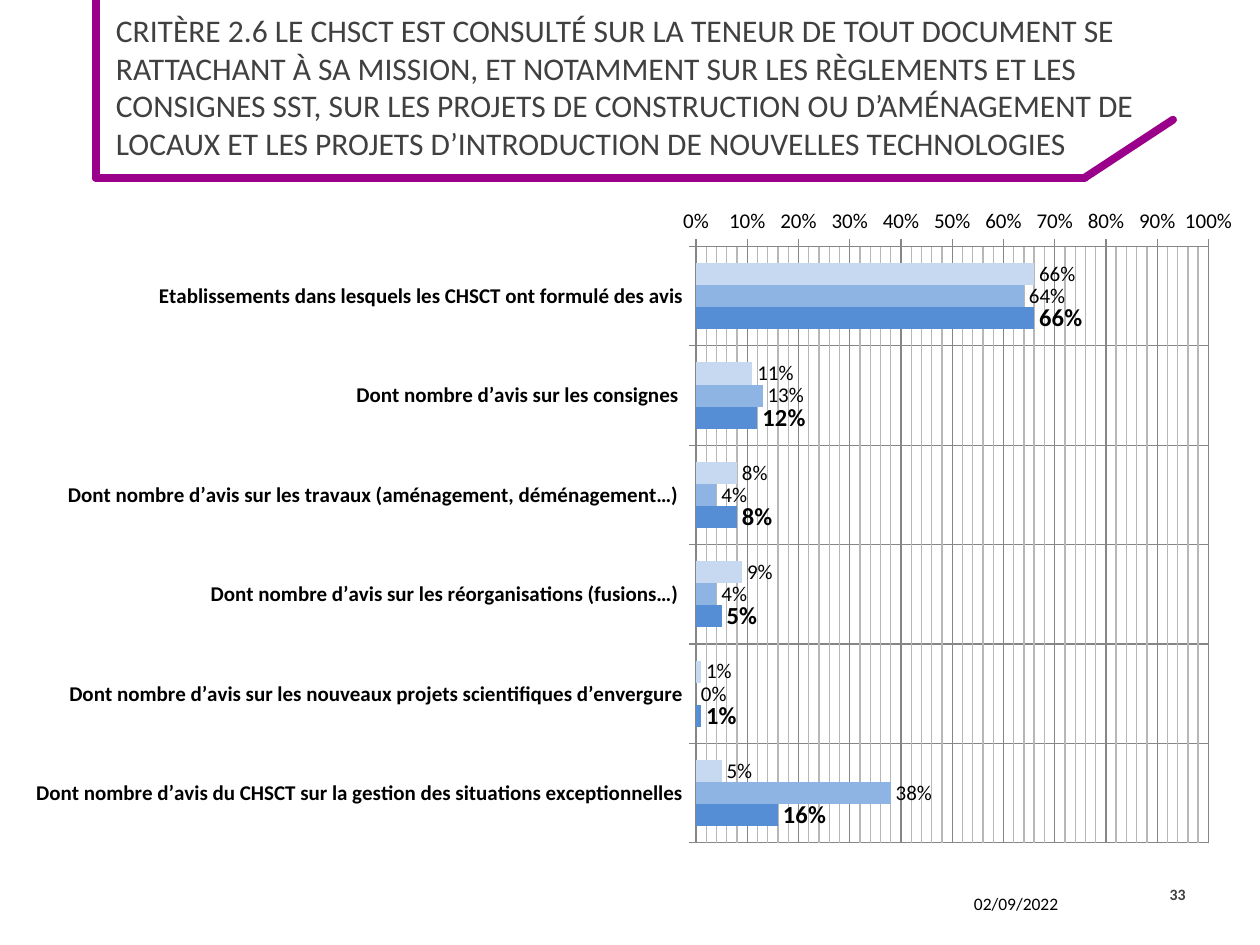
from dataclasses import dataclass
from lxml.etree import SubElement
from pptx import Presentation
from pptx.chart.data import CategoryChartData as Data
from pptx.dml.color import RGBColor as RGB
from pptx.enum.chart import XL_CHART_TYPE as Kind, XL_LABEL_POSITION as Pos
from pptx.enum.chart import XL_TICK_MARK as Tick
from pptx.enum.shapes import MSO_CONNECTOR as Link
from pptx.enum.text import MSO_ANCHOR as Anchor, PP_ALIGN as Align
from pptx.oxml.ns import qn
from pptx.util import Inches, Pt


@dataclass(frozen=True)
class Theme:
    face: str = "Calibri"
    frame: str = "9B008A"
    ink: str = "000000"
    soft: str = "404040"
    grid: str = "868686"
    fine: str = "B7B7B7"
    head: int = 18
    axis: int = 12
    total: int = 14
    date: int = 10
    page: int = 9


T = Theme()

TITLE = (
    "CRITÈRE 2.6 LE CHSCT EST CONSULTÉ SUR LA TENEUR DE TOUT DOCUMENT SE "
    "RATTACHANT À SA MISSION, ET NOTAMMENT SUR LES RÈGLEMENTS ET LES "
    "CONSIGNES SST, SUR LES PROJETS DE CONSTRUCTION OU D’AMÉNAGEMENT DE "
    "LOCAUX ET LES PROJETS D’INTRODUCTION DE NOUVELLES TECHNOLOGIES"
)
TOPICS = [
    "Etablissements dans lesquels les CHSCT ont formulé des avis",
    "Dont nombre d’avis sur les consignes ",
    "Dont nombre d’avis sur les travaux (aménagement, déménagement…) ",
    "Dont nombre d’avis sur les réorganisations (fusions…) ",
    "Dont nombre d’avis sur les nouveaux projets scientifiques d’envergure",
    "Dont nombre d’avis du CHSCT sur la gestion des situations exceptionnelles",
]
SERIES = [
    ("Series 1", [0.66, 0.11, 0.08, 0.09, 0.01, 0.05], "C6D9F1", T.axis, False),
    ("Series 2", [0.64, 0.13, 0.04, 0.04, 0, 0.38], "8EB4E3", T.axis, False),
    ("Series 3", [0.66, 0.12, 0.08, 0.05, 0.01, 0.16], "558ED5", T.total, True),
]


def set_font(font, size, color=T.ink, bold=False):
    font.name, font.size, font.bold = T.face, Pt(size), bold
    font.color.rgb = RGB.from_string(color)


def set_line(line, color, width):
    line.color.rgb = RGB.from_string(color)
    line.width = Pt(width)


def add_text(slide, box, text, size, color=T.ink, bold=False, align=Align.LEFT):
    frame = slide.shapes.add_textbox(*map(Inches, box)).text_frame
    frame.word_wrap = True
    frame.vertical_anchor = Anchor.MIDDLE
    frame.margin_left = frame.margin_right = Inches(0.09)
    frame.margin_top = frame.margin_bottom = Inches(0.04)
    para = frame.paragraphs[0]
    para.text, para.alignment = text, align
    set_font(para.font, size, color, bold)


def add_head(slide, box):
    left, top, width, height = box
    right, base = left + width, top + height
    bend = right - 0.7
    points = [(left, top), (left, base), (bend, base), (right, base - 0.46)]
    for start, end in zip(points, points[1:]):
        bar = slide.shapes.add_connector(
            Link.STRAIGHT, *map(Inches, start + end))
        set_line(bar.line, T.frame, 4.5)
        bar.line._get_or_add_ln().set("cap", "rnd")
        SubElement(bar._element.spPr, qn("a:effectLst"))
    text_box = (left + 0.07, top - 0.02, width + 0.07, height)
    add_text(slide, text_box, TITLE, T.head, T.soft)


def set_plot(chart, area):
    plot = chart._chartSpace.chart.plotArea
    old = plot.find(qn("c:layout"))
    if old is not None:
        plot.remove(old)
    layout = SubElement(plot, qn("c:layout"))
    plot.insert(0, layout)
    manual = SubElement(layout, qn("c:manualLayout"))
    rules = [("layoutTarget", "inner"), ("xMode", "edge"), ("yMode", "edge")]
    for name, value in rules + list(zip("xywh", area)):
        SubElement(manual, qn(f"c:{name}")).set("val", str(value))


def set_minor(axis):
    axis.has_minor_gridlines = True
    grid = axis._element.find(qn("c:minorGridlines"))
    line = SubElement(SubElement(grid, qn("c:spPr")), qn("a:ln"))
    line.set("w", str(Pt(0.75)))
    fill = SubElement(line, qn("a:solidFill"))
    SubElement(fill, qn("a:srgbClr")).set("val", T.fine)


def set_axes(chart):
    names, scale = chart.category_axis, chart.value_axis
    names.reverse_order = True
    names.major_tick_mark = Tick.OUTSIDE
    scale.major_tick_mark = Tick.CROSS
    scale.minimum_scale, scale.maximum_scale = 0, 1
    scale.major_unit, scale.minor_unit = 0.1, 0.02
    set_minor(scale)
    scale.tick_labels.number_format = "0%"
    scale.tick_labels.number_format_is_linked = False
    for axis in (names, scale):
        axis.has_major_gridlines = True
        set_line(axis.major_gridlines.format.line, T.grid, 0.75)
        set_line(axis.format.line, T.grid, 0.75)
        set_font(axis.tick_labels.font, T.axis, bold=axis is names)


def add_bars(slide, box):
    data = Data(number_format="0%")
    data.categories = TOPICS
    for name, values, *_ in SERIES:
        data.add_series(name, values)
    chart = slide.shapes.add_chart(
        Kind.BAR_CLUSTERED, *map(Inches, box), data).chart
    chart.has_legend = chart.has_title = False
    set_font(chart.font, T.head)
    set_plot(chart, (0.657, 0.123, 0.321, 0.801))
    set_axes(chart)
    plot = chart.plots[0]
    plot.gap_width, plot.overlap, plot.vary_by_categories = 150, 0, False
    for bars, (_, _, color, size, bold) in zip(plot.series, SERIES):
        bars.format.fill.solid()
        bars.format.fill.fore_color.rgb = RGB.from_string(color)
        bars.invert_if_negative = False
        labels = bars.data_labels
        labels.show_value = True
        labels.position = Pos.OUTSIDE_END
        labels.number_format = "0%"
        labels.number_format_is_linked = False
        set_font(labels.font, size, bold=bold)


def add_foot(slide, box):
    left, top, width, height = box
    add_text(slide, (left, top + 0.07, 1.27, height), "02/09/2022", T.date)
    add_text(slide, (left + width - 0.49, top, 0.49, height), "33",
             T.page, T.soft, True, Align.RIGHT)


def main():
    deck = Presentation()
    deck.slide_width, deck.slide_height = Inches(10), Inches(7.5)
    slide = deck.slides.add_slide(deck.slide_layouts[6])
    add_head(slide, (0.76, 0, 8.55, 1.41))
    add_bars(slide, (-2.8, 1.23, 12.67, 5.91))
    add_foot(slide, (7.64, 6.9, 1.86, 0.4))
    deck.save("out.pptx")


if __name__ == "__main__":
    main()
